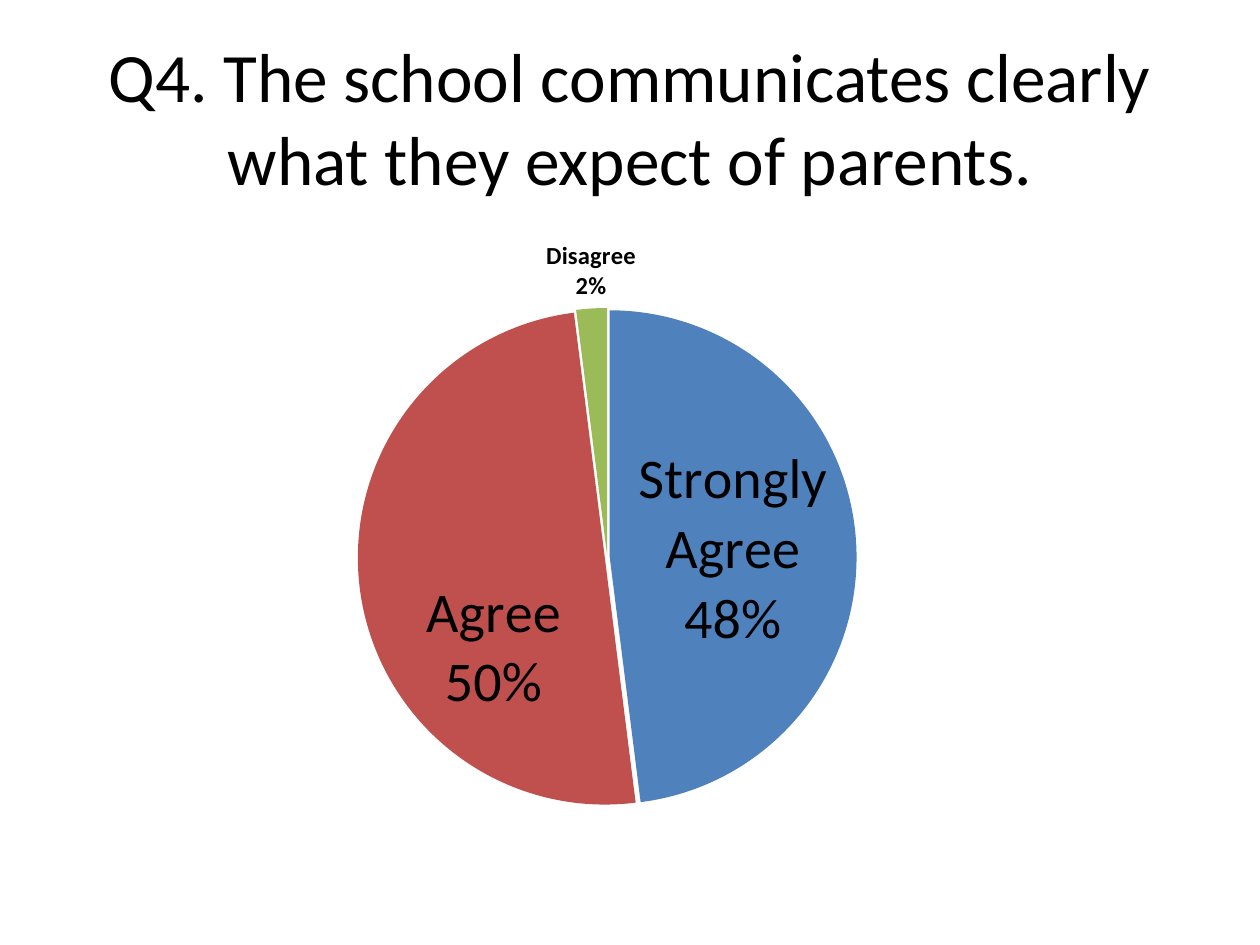
from lxml import etree
from pptx import Presentation
from pptx import util as u
from pptx.chart.data import CategoryChartData
from pptx.dml.color import RGBColor
from pptx.enum import chart as ch, text
from pptx.oxml import parse_xml
from pptx.oxml.ns import nsdecls, qn

BLACK = RGBColor(0x00, 0x00, 0x00)
BLUE = RGBColor(0x4F, 0x81, 0xBD)
RED = RGBColor(0xC0, 0x50, 0x4D)
GREEN = RGBColor(0x9B, 0xBB, 0x59)
PURPLE = RGBColor(0x80, 0x64, 0xA2)
FONT = "Calibri"


def manual_layout(**values):
    """Return a c:layout element whose children are given in schema order."""
    children = "".join(f'<c:{name} val="{value}"/>' for name, value in values.items())
    return parse_xml(
        f'<c:layout {nsdecls("c")}><c:manualLayout>{children}</c:manualLayout></c:layout>'
    )


presentation = Presentation()
presentation.slide_width = u.Cm(25.4)
presentation.slide_height = u.Cm(19.05)
slide = presentation.slides.add_slide(presentation.slide_layouts[6])

# Question
title = slide.shapes.add_textbox(u.Cm(1.27), u.Cm(0.76), u.Cm(22.86), u.Cm(3.18))
frame = title.text_frame
frame.word_wrap = True
frame.vertical_anchor = text.MSO_ANCHOR.MIDDLE
frame.text = "Q4. The school communicates clearly what they expect of parents."
paragraph = frame.paragraphs[0]
paragraph.alignment = text.PP_ALIGN.CENTER
paragraph.font.size = u.Pt(39.6)
paragraph.font.name = FONT
paragraph.font.color.rgb = BLACK

# Answers
answers = CategoryChartData()
answers.categories = ["SA", "A", "D", "SD"]
answers.add_series("Series 1", (48, 50, 2, 0))
chart = slide.shapes.add_chart(
    ch.XL_CHART_TYPE.PIE, u.Cm(1.27), u.Cm(4.45), u.Cm(22.86), u.Cm(12.57), answers
).chart
chart.has_legend = False
chart.has_title = False
chart.font.size = u.Pt(10)
chart.font.name = FONT
chart.font.color.rgb = BLACK

plot_area = chart.plots[0]._element.getparent()
for old_layout in plot_area.findall(qn("c:layout")):
    plot_area.remove(old_layout)
plot_area.insert(0, manual_layout(
    layoutTarget="inner", xMode="edge", yMode="edge", x=0.26, y=0.14, w=0.44, h=0.8
))

plot = chart.plots[0]
plot.vary_by_categories = True
series = plot.series[0]
for index, color in enumerate((BLUE, RED, GREEN, PURPLE)):
    fill = series.points[index].format.fill
    fill.solid()
    fill.fore_color.rgb = color
explosion = etree.Element(qn("c:explosion"), val="1")
series._element.find(qn("c:dPt")).addprevious(explosion)

# Slice labels: text, size, bold, position, downward shift
CENTER = ch.XL_LABEL_POSITION.CENTER
OUTSIDE = ch.XL_LABEL_POSITION.OUTSIDE_END
slice_labels = (
    ("Strongly Agree\n48%", 32, False, CENTER, 0),
    ("Agree\n50%", 32, False, CENTER, 0.12),
    ("Disagree\n2%", 14, True, OUTSIDE, 0),
)
series.data_labels.show_value = False
for leader_lines in series.data_labels._element.findall(qn("c:showLeaderLines")):
    leader_lines.set("val", "0")
for index, (wording, size, bold, position, shift) in enumerate(slice_labels):
    label = series.points[index].data_label
    label.text_frame.text = wording
    label.position = position
    for paragraph in label.text_frame.paragraphs:
        for run in paragraph.runs:
            run.font.size = u.Pt(size)
            run.font.bold = bold
            run.font.name = FONT
            run.font.color.rgb = BLACK
    label_element = series.data_labels._element.findall(qn("c:dLbl"))[index]
    for tag, shown in (("showVal", 0), ("showCatName", 1), ("showPercent", 1)):
        label_element.find(qn(f"c:{tag}")).set("val", str(shown))
    if shift:
        label_element.find(qn("c:idx")).addnext(manual_layout(x=0.01, y=shift))

presentation.save("out.pptx")
